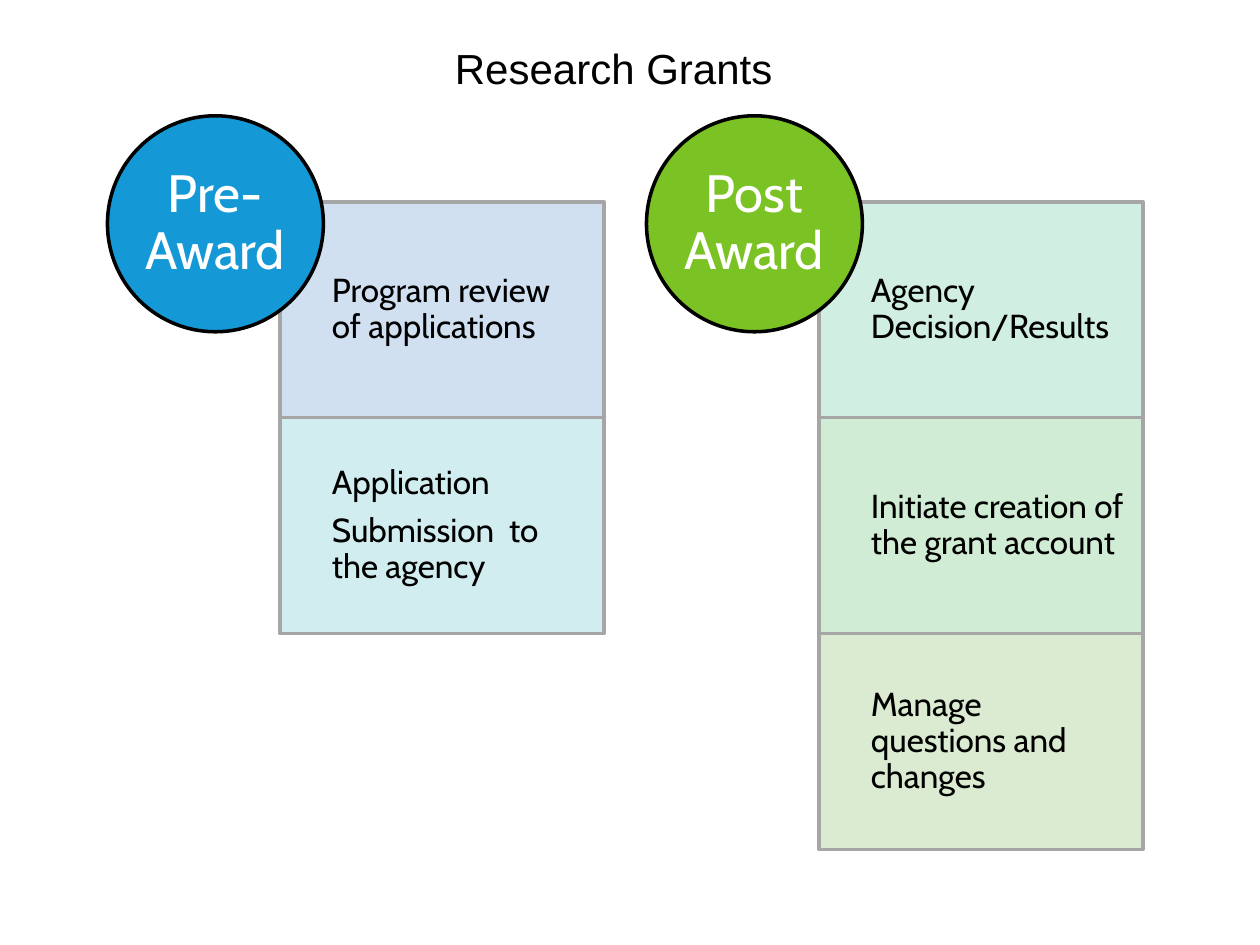
from lxml import etree
from pptx import Presentation
from pptx.dml.color import RGBColor
from pptx.enum.shapes import MSO_SHAPE
from pptx.enum.text import MSO_ANCHOR, MSO_AUTO_SIZE, PP_ALIGN
from pptx.oxml.ns import qn
from pptx.util import Pt

RECTANGLE, OVAL = MSO_SHAPE.RECTANGLE, MSO_SHAPE.OVAL
TOP, MIDDLE = MSO_ANCHOR.TOP, MSO_ANCHOR.MIDDLE
LEFT, CENTER = PP_ALIGN.LEFT, PP_ALIGN.CENTER
NO_AUTO_SIZE = MSO_AUTO_SIZE.NONE

CELL_WIDTH, CELL_HEIGHT = 185.1, 123.4
CELL_TOP = 115.3
CIRCLE_TOP, CIRCLE_LEFT = 66.2, 61.4
CELL_OFFSET = 98.7
COLUMN_STEP = 308

COLUMNS = [
    ("Pre-Award", "1598D6", [
        ("CCDDF0", ["Program review of applications"]),
        ("CCECEE", ["Application", "Submission  to the agency"]),
    ]),
    ("Post Award", "7BC224", [
        ("CDEDDF", ["Agency Decision/Results"]),
        ("CDEBD0", ["Initiate creation of the grant account"]),
        ("D7E9CD", ["Manage questions and changes"]),
    ]),
]


def color(value):
    return RGBColor.from_string(value)


def add_panel(kind, position, fill, outline, lines, size, text_color, align, insets):
    panel = slide.shapes.add_shape(kind, *[Pt(value) for value in position])
    panel.shadow.inherit = False
    panel.fill.solid()
    panel.fill.fore_color.rgb = color(fill)
    panel.line.color.rgb = color(outline)
    panel.line.width = Pt(2)
    frame = panel.text_frame
    frame.word_wrap = True
    frame.vertical_anchor = MIDDLE
    (frame.margin_left, frame.margin_top,
     frame.margin_right, frame.margin_bottom) = [Pt(value) for value in insets]
    for index, line in enumerate(lines):
        para = frame.add_paragraph() if index else frame.paragraphs[0]
        para.text = line
        para.alignment = align
        para.line_spacing = 0.9
        para.space_after = Pt(size * 0.35)
        para.font.name = "Cabin"
        para.font.size = Pt(size)
        para.font.color.rgb = color(text_color)
    return panel


deck = Presentation()
deck.slide_width, deck.slide_height = Pt(720), Pt(540)
slide = deck.slides.add_slide(deck.slide_layouts[5])

# Title
title = slide.shapes.title
title.left, title.top, title.width, title.height = Pt(252.7), Pt(20.9), Pt(209), Pt(36)
title.text_frame.auto_size = NO_AUTO_SIZE
title.text_frame.vertical_anchor = TOP
para = title.text_frame.paragraphs[0]
para.text = "Research Grants"
para.alignment = LEFT
para.font.name = "Arial"
para.font.size = Pt(24)
para.font.color.rgb = color("000000")

# Each phase: a stack of steps with a circle over its top left corner
for column, (phase, phase_color, steps) in enumerate(COLUMNS):
    left = CIRCLE_LEFT + column * COLUMN_STEP
    for row, (fill, lines) in enumerate(steps):
        position = (left + CELL_OFFSET, CELL_TOP + row * CELL_HEIGHT,
                    CELL_WIDTH, CELL_HEIGHT)
        cell = add_panel(RECTANGLE, position, fill, "A6A6A6", lines,
                         19, "000000", LEFT, (29.6, 10.8, 10.8, 10.8))
        # Fill at 90 % opacity
        fill_color = cell.fill._xPr.find(qn("a:solidFill"))[0]
        etree.SubElement(fill_color, qn("a:alpha")).set("val", "90000")
    add_panel(OVAL, (left, CIRCLE_TOP, CELL_HEIGHT, CELL_HEIGHT), phase_color,
              "000000", [phase], 30, "FFFFFF", CENTER, (0, 0, 0, 0))

deck.save("out.pptx")
